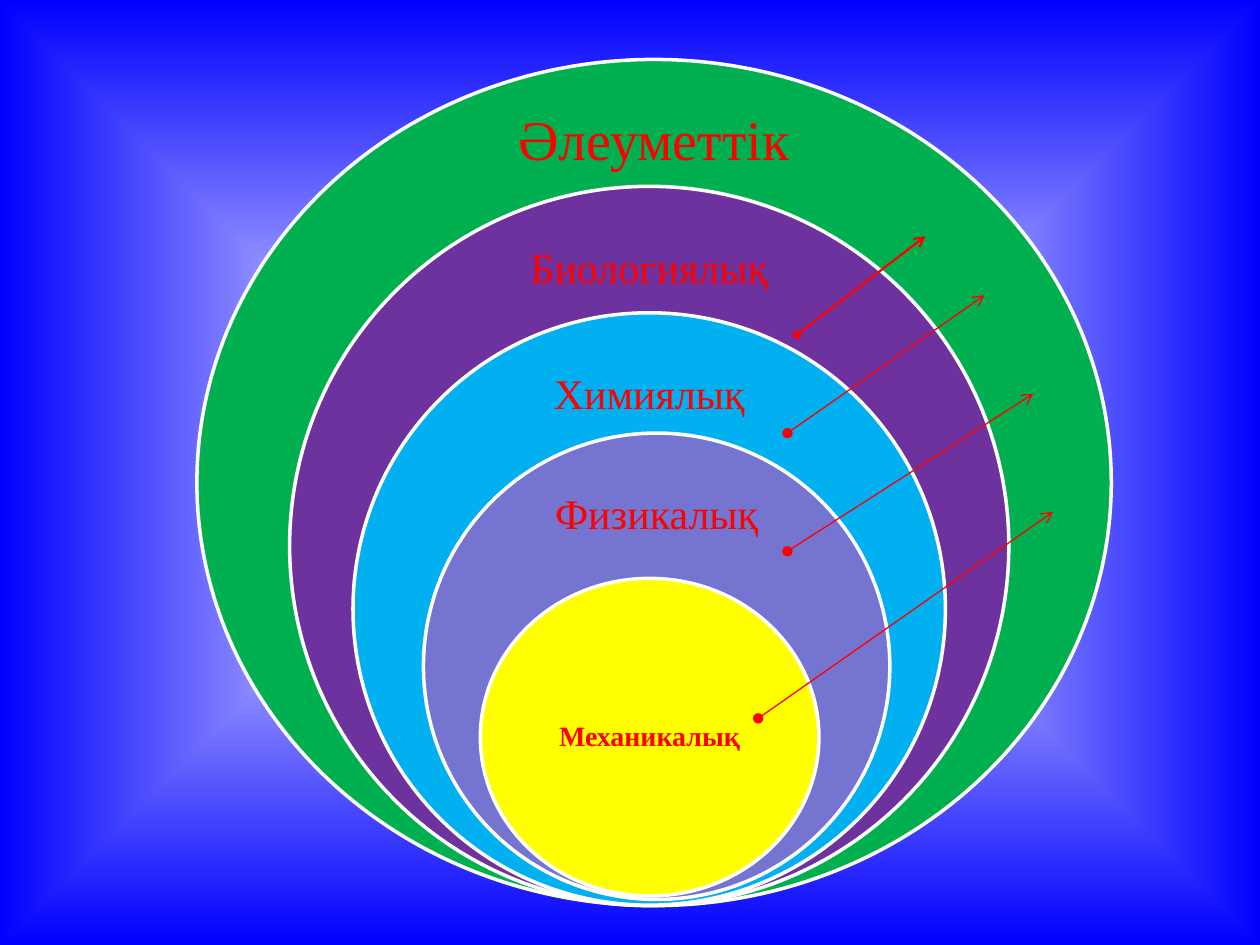
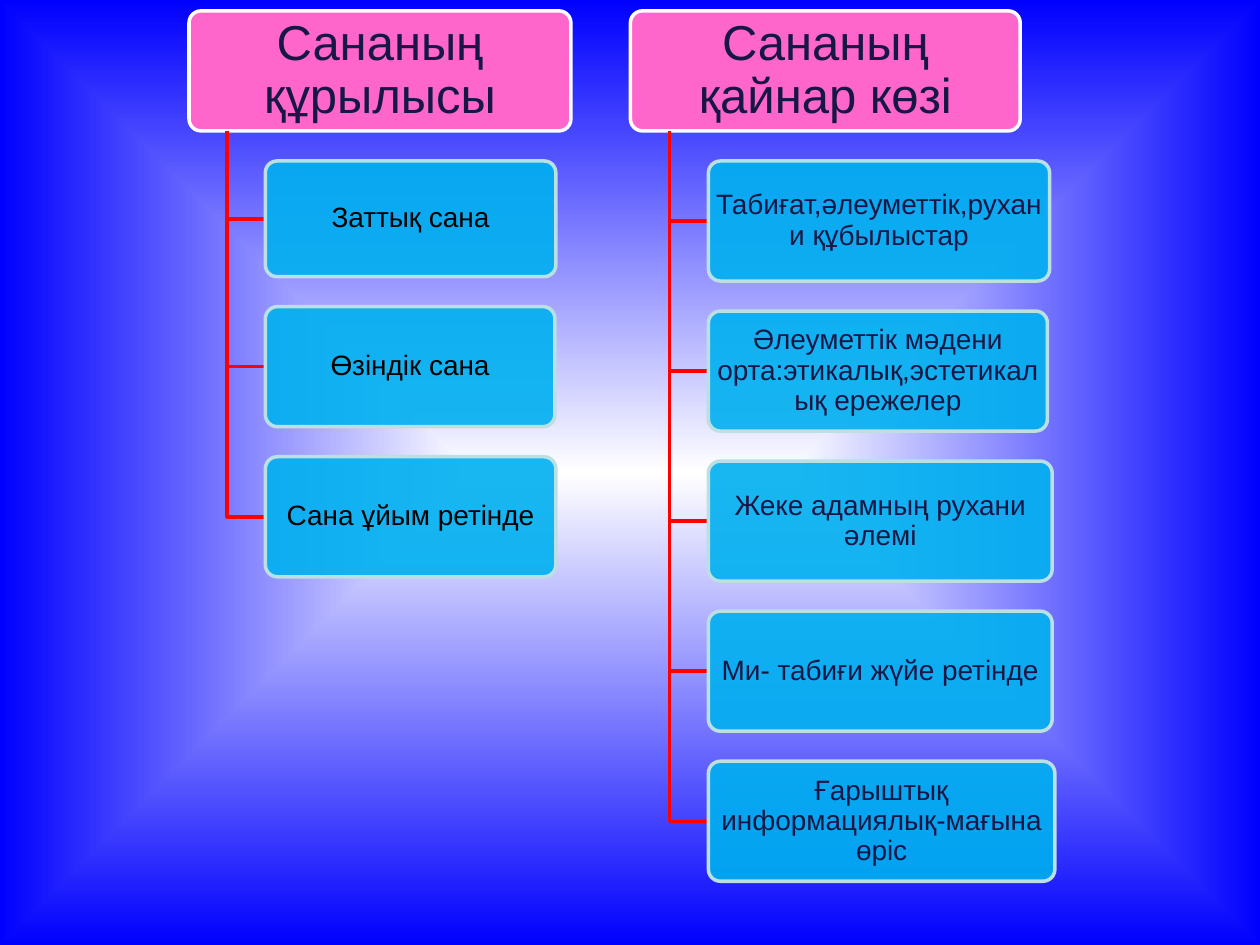
from dataclasses import dataclass

from lxml.etree import SubElement
from pptx import Presentation
from pptx.dml.color import RGBColor
from pptx.enum.shapes import MSO_CONNECTOR, MSO_SHAPE
from pptx.enum.text import MSO_ANCHOR, PP_ALIGN
from pptx.oxml.ns import qn
from pptx.util import Pt


@dataclass(frozen=True)
class Theme:
    # Colours
    white: str = "FFFFFF"
    blue: str = "0000FF"
    red: str = "FF0000"
    black: str = "000000"
    navy: str = "171745"
    pink: str = "FF66CC"
    sky: str = "00B0F0"
    pale: str = "BBE0E3"
    green: str = "00B050"
    purple: str = "7030A0"
    violet: str = "7575D1"
    yellow: str = "FFFF00"
    # Fonts and type sizes
    serif: str = "Times New Roman"
    sans: str = "Arial"
    display: int = 32
    heading: int = 28
    label: int = 24
    body: int = 16
    # Line widths
    outline: float = 2


THEME = Theme()


def rgb(code):
    return RGBColor.from_string(code)


def write(shape, text, *, size, color, font, bold=False, inset=(0, 0)):
    """Set one centred paragraph; inset is (horizontal, vertical) in points."""
    frame = shape.text_frame
    frame.word_wrap = True
    frame.vertical_anchor = MSO_ANCHOR.MIDDLE
    frame.margin_left = frame.margin_right = Pt(inset[0])
    frame.margin_top = frame.margin_bottom = Pt(inset[1])
    paragraph = frame.paragraphs[0]
    paragraph.alignment = PP_ALIGN.CENTER
    paragraph.line_spacing = 0.9
    run = paragraph.add_run()
    run.text = text
    run.font.size = Pt(size)
    run.font.name = font
    run.font.bold = bold
    run.font.color.rgb = rgb(color)


class Deck:
    def __init__(self, theme):
        self.theme = theme
        self.prs = Presentation()
        self.prs.slide_width, self.prs.slide_height = Pt(720), Pt(540)
        self.slide = None
        self.paint_background()

    def paint_background(self):
        """White centre fading to blue edges, shared through the master."""
        master = self.prs.slide_master
        fill = master.background.fill
        fill.gradient()
        for stop, color, position in zip(
                fill.gradient_stops, (self.theme.white, self.theme.blue), (0, 1)):
            stop.color.rgb = rgb(color)
            stop.position = position
        gradient = next(master.element.iter(qn("a:gradFill")))
        gradient.remove(gradient.find(qn("a:lin")))
        fade = SubElement(gradient, qn("a:path"), path="shape")
        SubElement(fade, qn("a:fillToRect"), l="50000", t="50000", r="50000", b="50000")

    def new_slide(self):
        self.slide = self.prs.slides.add_slide(self.prs.slide_layouts[6])

    def outlined(self, preset, box, fill, line, opacity=100):
        shape = self.slide.shapes.add_shape(preset, *map(Pt, box))
        shape.shadow.inherit = False
        shape.fill.solid()
        shape.fill.fore_color.rgb = rgb(fill)
        if opacity < 100:
            color = next(shape.fill._xPr.iter(qn("a:srgbClr")))
            SubElement(color, qn("a:alpha"), val=str(opacity * 1000))
        shape.line.color.rgb = rgb(line)
        shape.line.width = Pt(self.theme.outline)
        return shape

    def ellipse(self, box, fill, opacity=100):
        return self.outlined(MSO_SHAPE.OVAL, box, fill, self.theme.white, opacity)

    def card(self, box, fill, line, opacity=100):
        shape = self.outlined(MSO_SHAPE.ROUNDED_RECTANGLE, box, fill, line, opacity)
        shape.adjustments[0] = 0.1
        return shape

    def caption(self, box, text, **style):
        write(self.slide.shapes.add_textbox(*map(Pt, box)), text, **style)

    def arrow(self, start, end, width, head):
        link = self.slide.shapes.add_connector(
            MSO_CONNECTOR.STRAIGHT, *map(Pt, start + end))
        link.line.color.rgb = rgb(self.theme.red)
        link.line.width = Pt(width)
        outline = link.line._get_or_add_ln()
        SubElement(outline, qn("a:headEnd"), type=head)
        SubElement(outline, qn("a:tailEnd"), type="arrow")
        SubElement(link._element.spPr, qn("a:effectLst"))

    def elbow(self, x, top, bottom, right):
        """Branch running down a trunk and then right to a card."""
        builder = self.slide.shapes.build_freeform(Pt(x), Pt(top))
        builder.add_line_segments(
            [(Pt(x), Pt(bottom)), (Pt(right), Pt(bottom))], close=False)
        branch = builder.convert_to_shape()
        branch.shadow.inherit = False
        branch.fill.background()
        branch.line.color.rgb = rgb(self.theme.red)
        branch.line.width = Pt(self.theme.outline)


def build_levels(deck):
    t = deck.theme
    deck.new_slide()

    # Nested levels, outermost first
    levels = [
        ("Әлеуметтік", (112.5, 34, 522.5, 483.5), t.green, 100, t.display),
        ("Биологиялық", (165.5, 106.5, 411, 411), t.purple, 98, t.label),
        ("Химиялық", (201.75, 178.75, 338.5, 338.5), t.sky, 100, t.label),
        ("Физикалық", (242, 247.5, 266.5, 266.5), t.violet, 100, t.label),
    ]
    for name, box, fill, opacity, size in levels:
        deck.ellipse(box, fill, opacity)
        left, top, width, _ = box
        deck.caption((left + width / 2 - 98, top + 23.5, 196, 48), name,
                     size=size, color=t.red, font=t.serif)
    core = deck.ellipse((274.5, 330.5, 193.5, 181.5), t.yellow)
    write(core, "Механикалық", size=t.body, color=t.red, font=t.serif, bold=True)

    # Arrows from each inner level to the outermost one
    for start, end, width, head in [
        ((433.25, 410.5), (601.75, 292.5), 0.75, "oval"),
        ((450, 315), (590.5, 225), 0.75, "oval"),
        ((450, 247.5), (562.5, 168.75), 0.75, "oval"),
        ((455.5, 191.25), (528.75, 135), 1.25, "diamond"),
    ]:
        deck.arrow(start, end, width, head)


def build_branch(deck, left, width, heading, items, color):
    """Header with cards below it; items are (text, width, height)."""
    t = deck.theme
    top, header_height, gap = 6.25, 68.6, 17.15
    header = deck.card((left, top, width, header_height), t.pink, t.white)
    write(header, heading, size=t.heading, color=t.navy, font=t.sans, inset=(4, 2.7))

    trunk, card_left = left + 0.1 * width, left + 0.2 * width
    header_bottom = top + header_height
    card_top = header_bottom + gap
    for text, card_width, height in items:
        deck.elbow(trunk, header_bottom, card_top + height / 2, card_left)
        card = deck.card((card_left, card_top, card_width, height), t.sky, t.pale, 90)
        write(card, text, size=t.body, color=color, font=t.sans, inset=(2.4, 1.6))
        card_top += height + gap


def build_consciousness(deck):
    t = deck.theme
    deck.new_slide()

    # Structure of consciousness
    build_branch(deck, 108, 218.25, "Сананың құрылысы", [
        ("Заттық сана", 166, 66.1),
        ("Өзіндік сана", 165.5, 68.6),
        ("Сана ұйым ретінде", 166, 68.6),
    ], t.black)

    # Sources of consciousness
    build_branch(deck, 360.25, 222.75, "Сананың қайнар көзі", [
        ("Табиғат,әлеуметтік,рухани құбылыстар", 195, 68.6),
        ("Әлеуметтік мәдени орта:этикалық,эстетикалық ережелер", 193.75, 68.6),
        ("Жеке адамның рухани әлемі", 196.5, 68.6),
        ("Ми- табиғи жүйе ретінде", 196.5, 68.6),
        ("Ғарыштық информациялық-мағына өріс", 198, 68.6),
    ], t.navy)


def main():
    deck = Deck(THEME)
    build_levels(deck)
    build_consciousness(deck)
    deck.prs.save("out.pptx")


if __name__ == "__main__":
    main()
